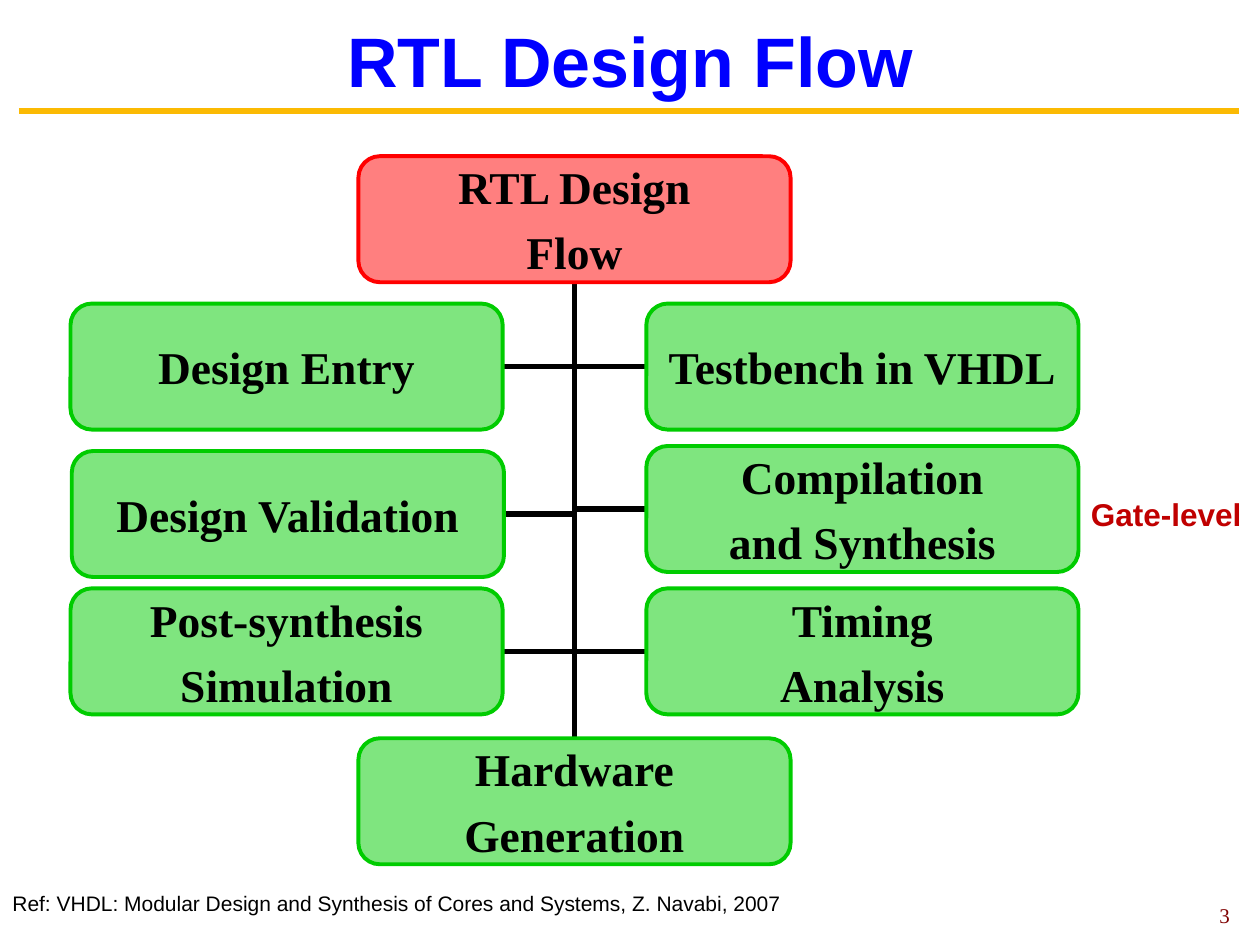
from dataclasses import dataclass
from lxml import etree
from pptx import Presentation
from pptx import util as u
from pptx.dml.color import RGBColor
from pptx.enum import shapes as sh, text as tx
from pptx.oxml import ns

IN = u.Inches


@dataclass(frozen=True)
class Theme:
    title: str = "0000FF"
    bar: str = "FBBA03"
    ink: str = "000000"
    root: str = "FF0000"
    step: str = "00CC00"
    note: str = "C00000"
    page: str = "800000"
    sans: str = "Arial"
    serif: str = "Times New Roman"
    head: int = 40
    box: int = 26
    label: int = 18
    small: int = 12


T = Theme()
BOX_W, BOX_H = 3.43, 1


def write(frame, text, size, color, font=T.sans, bold=False, align=None,
          anchor=None, wrap=True, inset=None, before=0):
    """Fill a text frame, one paragraph per line of text."""
    frame.word_wrap = wrap
    frame.auto_size = tx.MSO_AUTO_SIZE.NONE
    if anchor is not None:
        frame.vertical_anchor = anchor
    if inset is not None:
        frame.margin_left = frame.margin_right = IN(inset)
        frame.margin_top = frame.margin_bottom = IN(inset)
    for i, line in enumerate(text.split("\n")):
        par = frame.paragraphs[0] if i == 0 else frame.add_paragraph()
        par.alignment = align
        par.space_before = u.Pt(before)
        run = par.add_run()
        run.text = line
        run.font.size, run.font.name, run.font.bold = u.Pt(size), font, bold
        run.font.color.rgb = RGBColor.from_string(color)


def label(slide, box, text, size, color, **form):
    area = slide.shapes.add_textbox(*map(IN, box))
    write(area.text_frame, text, size, color, **form)


def link(slide, start, end, color=T.ink, width=3, bent=False):
    """Draw a line, or one elbow that leaves its start sideways."""
    kind = sh.MSO_CONNECTOR.ELBOW if bent else sh.MSO_CONNECTOR.STRAIGHT
    line = slide.shapes.add_connector(kind, *map(IN, start + end))
    line.line.color.rgb = RGBColor.from_string(color)
    line.line.width = u.Pt(width)
    props = line._element.spPr
    if bent:
        props.find(ns.qn("a:prstGeom")).set("prst", "bentConnector2")
    etree.SubElement(props, ns.qn("a:effectLst"))
    return line


def node(slide, left, top, text, color):
    """Draw a rounded box with a half-transparent fill."""
    box = slide.shapes.add_shape(sh.MSO_SHAPE.ROUNDED_RECTANGLE,
                                 *map(IN, (left, top, BOX_W, BOX_H)))
    box.adjustments[0] = 0.17
    box.shadow.inherit = False
    box.fill.solid()
    box.fill.fore_color.rgb = RGBColor.from_string(color)
    tint = box._element.spPr.find(".//" + ns.qn("a:srgbClr"))
    etree.SubElement(tint, ns.qn("a:alpha"), val="50000")
    box.line.color.rgb = RGBColor.from_string(color)
    box.line.width = u.Pt(2.25)
    write(box.text_frame, text, T.box, T.ink, font=T.serif, bold=True,
          align=tx.PP_ALIGN.CENTER, anchor=tx.MSO_ANCHOR.MIDDLE,
          wrap=False, inset=0, before=6)
    return box


def header(slide, left, top, width, height):
    title = slide.shapes.title
    title.left, title.top, title.width, title.height = map(
        IN, (left, top, width, height))
    write(title.text_frame, "RTL Design Flow", T.head, T.title, bold=True,
          align=tx.PP_ALIGN.CENTER, anchor=tx.MSO_ANCHOR.MIDDLE)
    link(slide, (0.15, 0.88), (9.83, 0.88), color=T.bar, width=3.75)


def flow(slide, left, top, width, height):
    """Place root and final box on the trunk, with steps on both sides."""
    mid = left + width / 2
    right = left + width - BOX_W
    low = top + BOX_H
    row, pitch = top + 1.17, 1.13
    steps = [
        (left, row, "Design Entry"),
        (right, row, "Testbench in VHDL"),
        (left + 0.01, row + pitch + 0.04, "Design Validation"),
        (right, row + pitch, "Compilation\nand Synthesis"),
        (left, row + 2 * pitch, "Post-synthesis\nSimulation"),
        (right, row + 2 * pitch, "Timing\nAnalysis"),
    ]

    # Elbows from the inner side of each step up to the root
    for x, y, _ in steps:
        side = x + BOX_W if x < mid - BOX_W / 2 else x
        link(slide, (side, y + BOX_H / 2), (mid, low), bent=True)
    trunk = link(slide, (mid, low), (mid, top + height - BOX_H))

    # Boxes over the lines
    root = node(slide, mid - BOX_W / 2, top, "RTL Design\nFlow", T.root)
    last = node(slide, mid - BOX_W / 2, top + height - BOX_H,
                "Hardware\nGeneration", T.step)
    for x, y, text in steps:
        node(slide, x, y, text, T.step)
    trunk.begin_connect(root, 2)
    trunk.end_connect(last, 0)


def notes(slide, left, top, width, height):
    """Place the reference and page number along the bottom."""
    label(slide, (left, top, width, height),
          "Ref: VHDL: Modular Design and Synthesis of Cores and Systems, "
          "Z. Navabi, 2007", T.small, T.ink)
    label(slide, (9.59, 7.15, 0.26, 0.23), "3", T.small, T.page,
          font=T.serif, align=tx.PP_ALIGN.CENTER,
          anchor=tx.MSO_ANCHOR.MIDDLE, wrap=False)


def main():
    deck = Presentation()
    deck.slide_width, deck.slide_height = IN(10), IN(7.5)
    slide = deck.slides.add_slide(deck.slide_layouts[5])
    header(slide, 0.19, 0.14, 9.62, 0.67)
    flow(slide, 0.56, 1.24, 8, 5.62)
    label(slide, (8.56, 3.88, 1.51, 0.4), "Gate-level", T.label, T.note,
          bold=True)
    notes(slide, 0, 7.02, 9.78, 0.61)
    deck.save("out.pptx")


if __name__ == "__main__":
    main()
